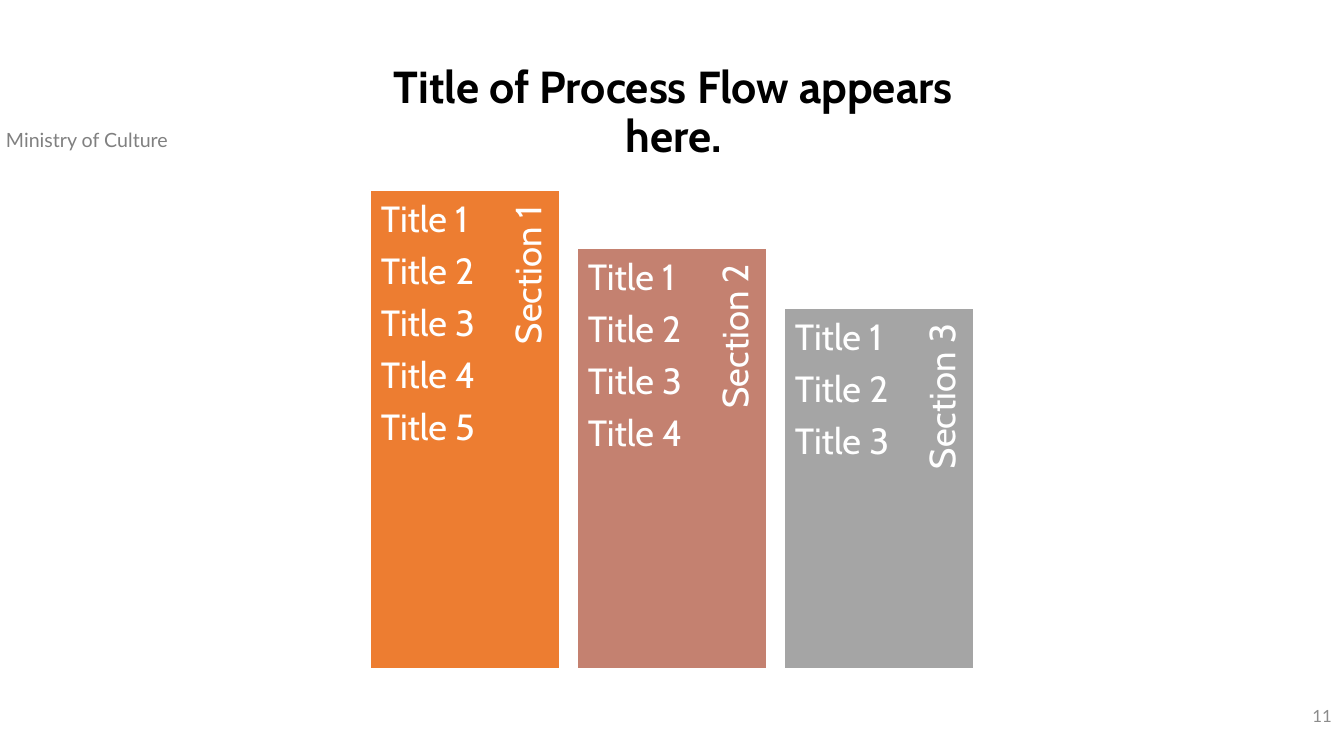
from pptx import Presentation
from pptx import util as u
from pptx.dml.color import RGBColor
from pptx.enum import shapes, text

PX = 914400 / 100.8
LEFT, CENTER, RIGHT = text.PP_ALIGN.LEFT, text.PP_ALIGN.CENTER, text.PP_ALIGN.RIGHT
TOP, MIDDLE = text.MSO_ANCHOR.TOP, text.MSO_ANCHOR.MIDDLE


def px(*lengths):
    return [u.Emu(round(length * PX)) for length in lengths]


def write(holder, lines, size, font, color, align=LEFT, anchor=TOP,
          insets=(10, 5, 10, 5), spacing=1.0, after=0, bold=False):
    frame = holder.text_frame
    frame.word_wrap = True
    frame.auto_size = text.MSO_AUTO_SIZE.NONE
    frame.vertical_anchor = anchor
    (frame.margin_left, frame.margin_top,
     frame.margin_right, frame.margin_bottom) = px(*insets)
    for i, line in enumerate(lines):
        paragraph = frame.add_paragraph() if i else frame.paragraphs[0]
        paragraph.alignment = align
        paragraph.line_spacing = spacing
        paragraph.space_before = u.Pt(0)
        paragraph.space_after = u.Pt(after)
        run = paragraph.add_run()
        run.text = line
        run.font.size = u.Pt(size)
        run.font.name = font
        run.font.bold = bold
        run.font.color.rgb = RGBColor.from_string(color)


deck = Presentation()
deck.slide_width, deck.slide_height = px(1344, 756)
slide = deck.slides.add_slide(deck.slide_layouts[5])

heading = slide.shapes.title
heading.left, heading.top, heading.width, heading.height = px(331, 60, 685, 108)
write(heading, ["Title of Process Flow appears here."], 32, "Cabin", "000000",
      align=CENTER, spacing=0.9, bold=True)

ministry = slide.shapes.add_textbox(*px(-4, 123, 292, 34))
write(ministry, ["Ministry of Culture"], 14, "Lato", "808080")

page_number = slide.shapes.add_textbox(*px(1040, 696, 302, 40))
write(page_number, ["11"], 12, "Lato", "8C8C8C", align=RIGHT, anchor=MIDDLE)

SECTIONS = [("Section 1", 190, "ED7D31", 5),
            ("Section 2", 248, "C48170", 4),
            ("Section 3", 308, "A5A5A5", 3)]
BOTTOM, LABEL_HEIGHT = 669, 49

for i, (section, top, color, count) in enumerate(SECTIONS):
    left = 370 + 207 * i
    height = BOTTOM - top

    bar = slide.shapes.add_shape(shapes.MSO_SHAPE.RECTANGLE, *px(left, top, 190, height))
    bar.shadow.inherit = False
    bar.fill.solid()
    bar.fill.fore_color.rgb = RGBColor.from_string(color)
    bar.line.color.rgb = RGBColor.from_string("FFFFFF")
    bar.line.width = u.Pt(1)

    length = round(height * 0.9)
    center_x, center_y = left + 161, top + length // 2
    label = slide.shapes.add_textbox(*px(center_x - length // 2, center_y - LABEL_HEIGHT // 2,
                                         length, LABEL_HEIGHT))
    label.rotation = 270
    write(label, [section], 26, "Cabin", "FFFFFF", align=RIGHT, anchor=MIDDLE,
          insets=(11, 0, 16, 4), spacing=0.9, after=9)

    titles = slide.shapes.add_textbox(*px(left, top, 135, height))
    write(titles, [f"Title {n}" for n in range(1, count + 1)], 26, "Cabin", "FFFFFF",
          insets=(11, 11, 11, 11), spacing=0.9, after=9)

deck.save("out.pptx")
